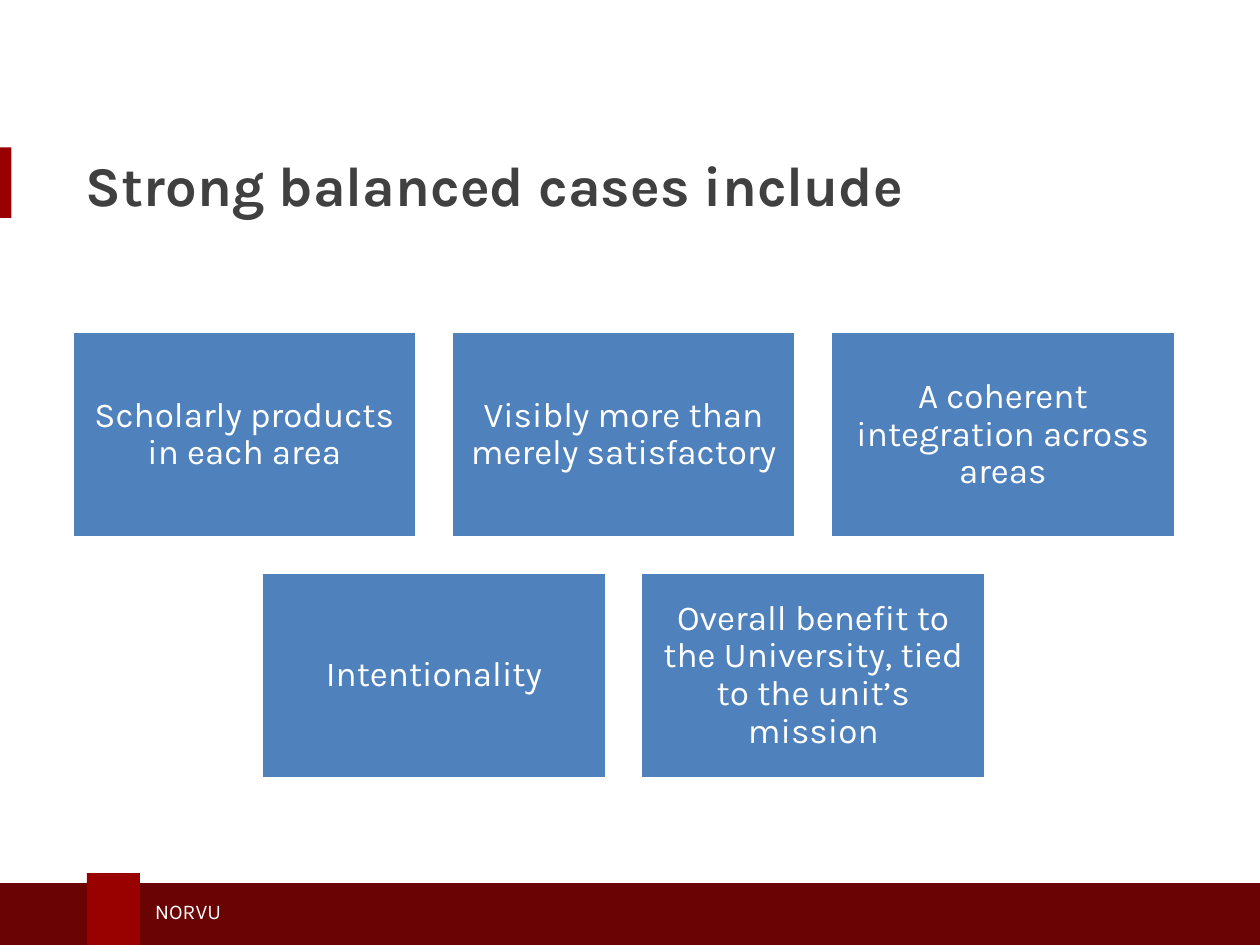
from pptx import Presentation
from pptx.dml.color import RGBColor
from pptx.enum import shapes, text
from pptx.util import Inches, Pt

CRIMSON = RGBColor(0x99, 0x00, 0x00)
MAROON = RGBColor(0x69, 0x03, 0x04)
BLUE = RGBColor(0x4F, 0x81, 0xBD)
CHARCOAL = RGBColor(0x40, 0x40, 0x41)
WHITE = RGBColor(0xFF, 0xFF, 0xFF)


def add_block(left, top, width, height, color):
    block = slide.shapes.add_shape(
        shapes.MSO_SHAPE.RECTANGLE,
        Inches(left), Inches(top), Inches(width), Inches(height))
    block.shadow.inherit = False
    block.fill.solid()
    block.fill.fore_color.rgb = color
    block.line.fill.background()
    return block


def write(frame, wording, size, color, align, bold=False):
    frame.text = wording
    frame.word_wrap = True
    frame.auto_size = text.MSO_AUTO_SIZE.NONE
    frame.vertical_anchor = text.MSO_ANCHOR.MIDDLE
    paragraph = frame.paragraphs[0]
    paragraph.alignment = align
    font = paragraph.runs[0].font
    font.name = "Karla"
    font.size = Pt(size)
    font.bold = bold
    font.color.rgb = color
    return paragraph


prs = Presentation()
prs.slide_width = Inches(10)
prs.slide_height = Inches(7.5)
slide = prs.slides.add_slide(prs.slide_layouts[5])

add_block(0, 1.17, 0.09, 0.56, CRIMSON)
add_block(0, 7.01, 10, 0.49, MAROON)
add_block(0.69, 6.93, 0.42, 0.57, CRIMSON)
campus = slide.shapes.add_textbox(
    Inches(1.13), Inches(7.08), Inches(3.95), Inches(0.3))
write(campus.text_frame, "NORVU", 12, WHITE, text.PP_ALIGN.LEFT)

heading = slide.shapes.title
heading.left, heading.top = Inches(0.58), Inches(1.11)
heading.width, heading.height = Inches(8.75), Inches(0.7)
write(heading.text_frame, "Strong balanced cases include", 32, CHARCOAL,
      text.PP_ALIGN.LEFT, bold=True)

criteria_rows = [
    ["Scholarly products in each area",
     "Visibly more than merely satisfactory",
     "A coherent integration across areas"],
    ["Intentionality",
     "Overall benefit to the University, tied to the unit’s mission"],
]
card_width, card_height = 2.74, 1.64
gap = 0.27
center, first_top = 4.95, 2.63

for row, criteria in enumerate(criteria_rows):
    row_width = len(criteria) * (card_width + gap) - gap
    top = first_top + row * (card_height + gap)
    for column, criterion in enumerate(criteria):
        left = center - row_width / 2 + column * (card_width + gap)
        card = add_block(left, top, card_width, card_height, BLUE)
        card.line.color.rgb = WHITE
        card.line.width = Pt(2)
        frame = card.text_frame
        frame.margin_left = frame.margin_right = Inches(0.08)
        frame.margin_top = frame.margin_bottom = Inches(0.08)
        paragraph = write(frame, criterion, 20, WHITE, text.PP_ALIGN.CENTER)
        paragraph.line_spacing = 0.9

prs.save("out.pptx")
